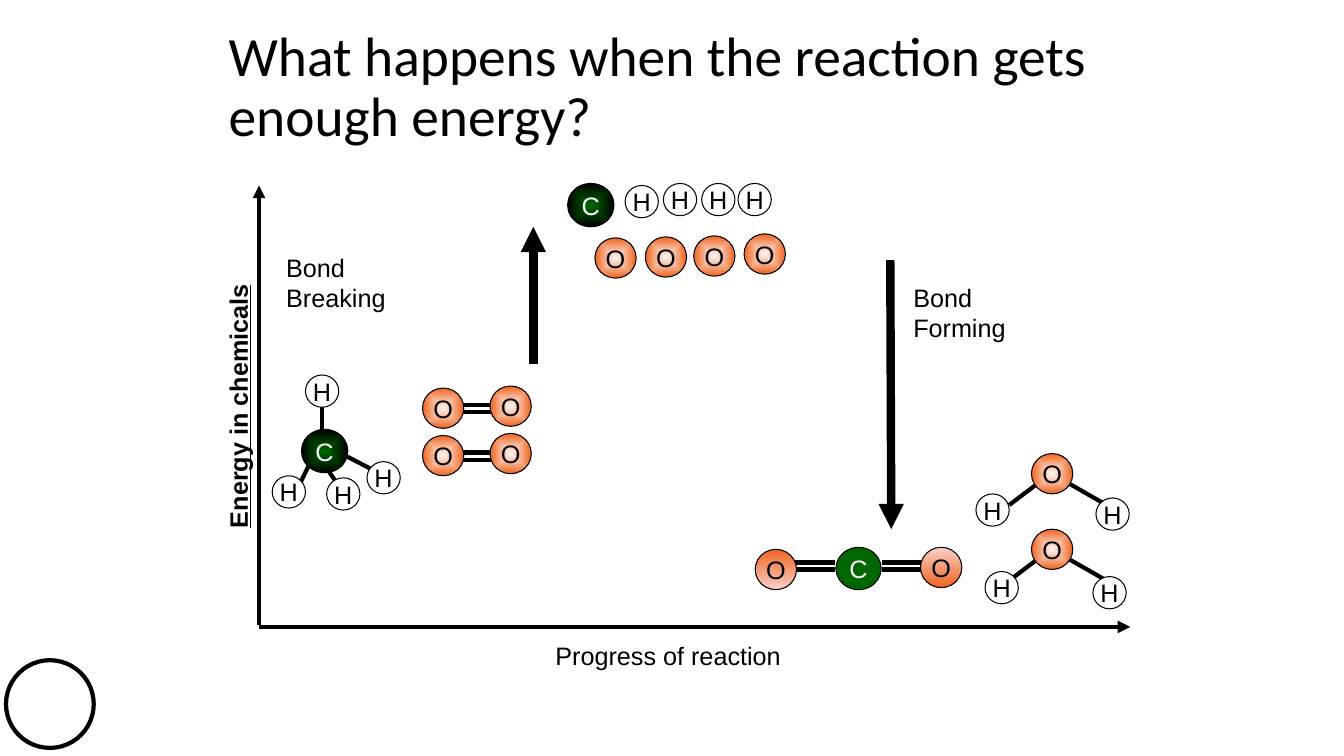
from dataclasses import dataclass

from lxml.etree import SubElement
from pptx import Presentation
from pptx.dml.color import RGBColor
from pptx.enum.shapes import MSO_CONNECTOR as CONN, MSO_SHAPE as SHAPE
from pptx.enum.text import MSO_ANCHOR as ANCHOR, MSO_AUTO_SIZE as AUTO, PP_ALIGN as ALIGN
from pptx.oxml.ns import qn
from pptx.util import Emu, Pt

PX = 9144
BLACK = RGBColor(0x00, 0x00, 0x00)
WHITE = RGBColor(0xFF, 0xFF, 0xFF)
GREEN = RGBColor(0x00, 0x66, 0x00)
ORANGE = RGBColor(0xEF, 0x64, 0x1F)
CREAM = RGBColor(0xFD, 0xF5, 0xF3)
PEACH = RGBColor(0xF8, 0xD0, 0xC9)


@dataclass(frozen=True)
class Element:
    symbol: str
    w: int
    h: int
    fills: tuple[RGBColor, ...]
    ink: RGBColor = BLACK
    radial: bool = True


@dataclass(frozen=True)
class Line:
    x1: int
    y1: int
    x2: int
    y2: int
    width: int = 3
    arrow: bool = False


HYDROGEN = Element("H", 33, 32, (WHITE,))
OXYGEN = Element("O", 41, 40, (CREAM, ORANGE))
CARBON = Element("C", 46, 43, (GREEN, BLACK), WHITE)
CO2_CARBON = Element("C", 45, 42, (GREEN,), WHITE)
CO2_LEFT = Element("O", 41, 40, (ORANGE, PEACH), radial=False)
CO2_RIGHT = Element("O", 41, 40, (PEACH, ORANGE), radial=False)

ARROWS = [
    Line(883, 258, 884, 525, 6, True),
    Line(529, 361, 529, 225, 6, True),
    Line(257, 620, 257, 184, 3, True),
    Line(257, 622, 1121, 622, 3, True),
]
METHANE_BONDS = [
    Line(319, 430, 319, 397),
    Line(309, 456, 297, 481),
    Line(319, 457, 340, 488),
    Line(329, 445, 381, 472),
]
DOUBLE_BONDS = [(457, 402), (457, 449), (875, 558), (789, 558)]
WATER_TOPS = [450, 525]

ATOMS: list[tuple[Element, list[tuple[int, int]]]] = [
    (OXYGEN, [(486, 383), (419, 385), (486, 430), (419, 432),
              (590, 236), (738, 232), (688, 234), (640, 235)]
     + [(1023, top) for top in WATER_TOPS]),
    (CARBON, [(299, 426), (563, 182)]),
    (HYDROGEN, [(303, 372), (364, 458), (324, 474), (270, 472),
                (620, 184), (658, 182), (696, 182), (732, 182),
                (968, 490), (1087, 494), (977, 567), (1084, 572)]),
    (CO2_LEFT, [(749, 545)]),
    (CO2_CARBON, [(829, 543)]),
    (CO2_RIGHT, [(913, 543)]),
]

prs = Presentation()
prs.slide_width, prs.slide_height = Emu(1333 * PX), Emu(750 * PX)
slide = prs.slides.add_slide(prs.slide_layouts[6])


def box(x: int, y: int, w: int, h: int) -> list[Emu]:
    return [Emu(v * PX) for v in (x, y, w, h)]


def write(s, text: str, *, size: float = 18, font: str = "Arial",
          color: RGBColor = BLACK, bold: bool = False, underline: bool = False,
          align: ALIGN = ALIGN.LEFT, anchor: ANCHOR = ANCHOR.TOP,
          wrap: bool = False, grow: bool = False, spacing: float = 1.0) -> None:
    tf = s.text_frame
    tf.word_wrap = wrap
    tf.vertical_anchor = anchor
    tf.auto_size = AUTO.SHAPE_TO_FIT_TEXT if grow else AUTO.NONE
    for i, line in enumerate(text.split("\n")):
        p = tf.add_paragraph() if i else tf.paragraphs[0]
        p.alignment = align
        p.line_spacing = spacing
        r = p.add_run()
        r.text = line
        r.font.name, r.font.size = font, Pt(size)
        r.font.bold, r.font.underline = bold, underline
        r.font.color.rgb = color


def add_text(x: int, y: int, w: int, h: int, text: str, **fmt):
    s = slide.shapes.add_textbox(*box(x, y, w, h))
    write(s, text, **fmt)
    return s


def add_line(line: Line) -> None:
    ends = box(line.x1, line.y1, line.x2, line.y2)
    s = slide.shapes.add_connector(CONN.STRAIGHT, *ends)
    s.line.color.rgb = BLACK
    s.line.width = Pt(line.width)
    if line.arrow:
        SubElement(s.line._get_or_add_ln(), qn("a:tailEnd"), type="triangle")
    SubElement(s._element.spPr, qn("a:effectLst"))


def add_circle(x: int, y: int, w: int, h: int, fills: tuple[RGBColor, ...],
               width: float, radial: bool = True):
    s = slide.shapes.add_shape(SHAPE.OVAL, *box(x, y, w, h))
    s.shadow.inherit = False
    s.line.color.rgb = BLACK
    s.line.width = Pt(width)
    if len(fills) == 1:
        s.fill.solid()
        s.fill.fore_color.rgb = fills[0]
        return s
    s.fill.gradient()
    for stop, color, position in zip(s.fill.gradient_stops, fills, (0, 1)):
        stop.color.rgb = color
        stop.position = position
    s.fill.gradient_angle = 270
    if radial:
        grad = s._element.spPr.find(qn("a:gradFill"))
        grad.remove(grad.find(qn("a:lin")))
        path = SubElement(grad, qn("a:path"), path="shape")
        SubElement(path, qn("a:fillToRect"), {side: "50000" for side in "ltrb"})
    return s


def add_atom(element: Element, x: int, y: int) -> None:
    s = add_circle(x, y, element.w, element.h, element.fills, 0.75, element.radial)
    write(s, element.symbol, color=element.ink, align=ALIGN.CENTER, anchor=ANCHOR.MIDDLE)


def main() -> None:
    add_circle(6, 655, 87, 87, (WHITE,), 3)
    add_text(217, 20, 900, 135, "What happens when the reaction gets enough energy?",
             size=39.6, font="Calibri", anchor=ANCHOR.MIDDLE, wrap=True, spacing=0.9)
    add_text(896, 275, 113, 71, "Bond\nForming", grow=True)
    add_text(274, 245, 120, 71, "Bond\nBreaking", grow=True)
    add_text(541, 630, 246, 40, "Progress of reaction", grow=True)
    s = add_text(104, 383, 264, 40, "Energy in chemicals", bold=True, underline=True,
                 align=ALIGN.CENTER, anchor=ANCHOR.MIDDLE, grow=True)
    s.rotation = 270

    bonds = [Line(x, y + gap, x + 39, y + gap) for x, y in DOUBLE_BONDS for gap in (0, 7)]
    for top in WATER_TOPS:
        bonds += [Line(1001, top + 51, 1030, top + 29),
                  Line(1059, top + 29, 1094, top + 49)]
    for line in ARROWS + METHANE_BONDS + bonds:
        add_line(line)
    for element, places in ATOMS:
        for x, y in places:
            add_atom(element, x, y)
    prs.save("out.pptx")


if __name__ == "__main__":
    main()
